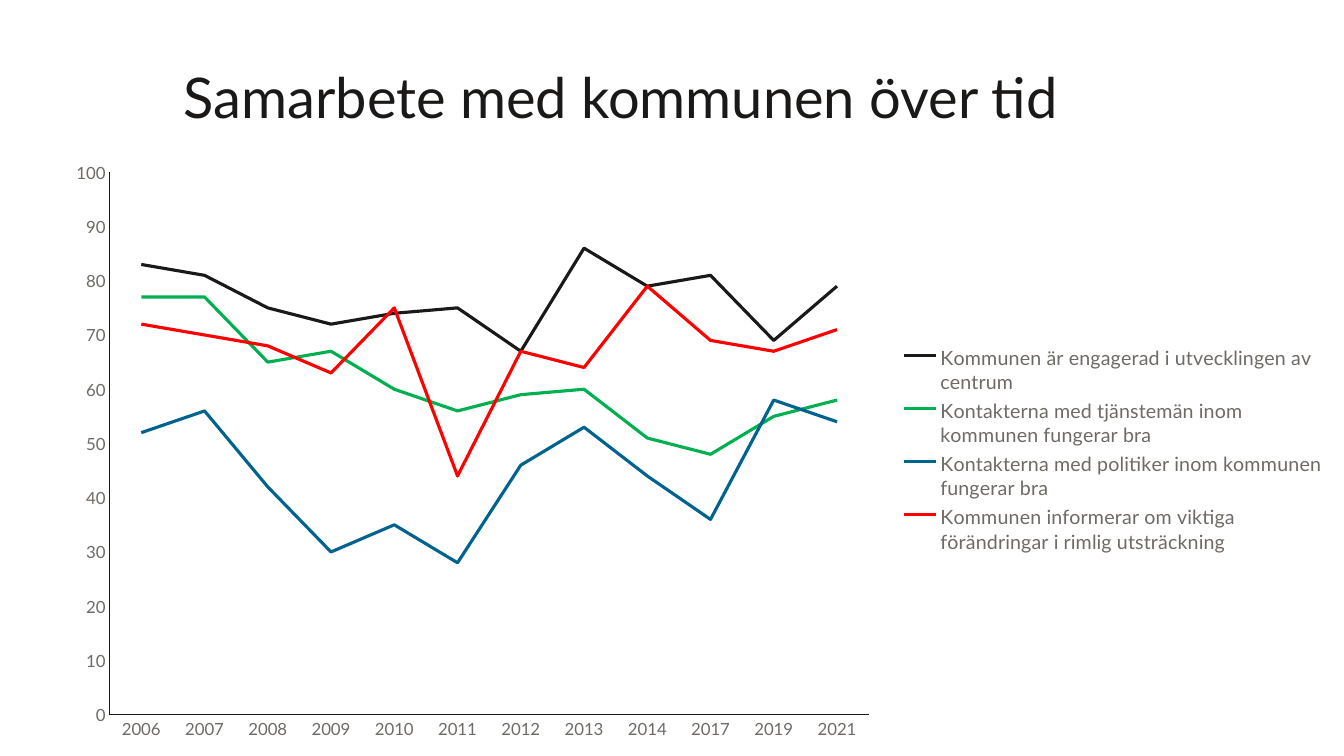
from dataclasses import dataclass

from lxml.etree import SubElement
from pptx import Presentation
from pptx.chart.data import CategoryChartData
from pptx.dml.color import RGBColor
from pptx.enum.chart import XL_CHART_TYPE as ChartType
from pptx.enum.chart import XL_LEGEND_POSITION as LegendPosition
from pptx.enum.chart import XL_TICK_MARK as TickMark
from pptx.enum.text import MSO_ANCHOR as Anchor
from pptx.enum.text import MSO_AUTO_SIZE as AutoSize
from pptx.enum.text import PP_ALIGN as Align
from pptx.oxml import parse_xml
from pptx.oxml.ns import nsdecls, qn
from pptx.util import Inches, Pt

FONT = "Lato"
INK = "1A1918"
GREY = "6E6A65"


@dataclass(frozen=True)
class Statement:
    text: str
    color: str
    shares: tuple[int, ...]


@dataclass(frozen=True)
class Region:
    """Fractions of the chart's width and height."""
    x: float
    y: float
    w: float
    h: float


YEARS = [str(year) for year in (*range(2006, 2015), 2017, 2019, 2021)]
STATEMENTS = [
    Statement("Kommunen är engagerad i utvecklingen av centrum", INK,
              (83, 81, 75, 72, 74, 75, 67, 86, 79, 81, 69, 79)),
    Statement("Kontakterna med tjänstemän inom kommunen fungerar bra", "00B050",
              (77, 77, 65, 67, 60, 56, 59, 60, 51, 48, 55, 58)),
    Statement("Kontakterna med politiker inom kommunen fungerar bra", "00638E",
              (52, 56, 42, 30, 35, 28, 46, 53, 44, 36, 58, 54)),
    Statement("Kommunen informerar om viktiga förändringar i rimlig utsträckning",
              "FF0000", (72, 70, 68, 63, 75, 44, 67, 64, 79, 69, 67, 71)),
]
PLOT_REGION = Region(0.05, 0.04, 0.59, 0.9)
LEGEND_REGION = Region(0.66, 0.32, 0.34, 0.36)


def apply(target, values: dict) -> None:
    for attribute, value in values.items():
        setattr(target, attribute, value)


def paint(color_format, hex_color: str) -> None:
    color_format.rgb = RGBColor.from_string(hex_color)


def style_font(font, size: float, hex_color: str) -> None:
    apply(font, {"name": FONT, "size": Pt(size), "bold": False})
    paint(font.color, hex_color)


def style_line(line, width: float, hex_color: str) -> None:
    line.width = Pt(width)
    paint(line.color, hex_color)


def make_layout(region: Region, inner: bool):
    layout = parse_xml(f"<c:layout {nsdecls('c')}><c:manualLayout/></c:layout>")
    settings = {"layoutTarget": "inner"} if inner else {}
    settings |= {"xMode": "edge", "yMode": "edge"}
    settings |= {key: str(getattr(region, key)) for key in "xywh"}
    for tag, value in settings.items():
        SubElement(layout[0], qn(f"c:{tag}")).set("val", value)
    return layout


def clear_layout(element) -> None:
    for layout in element.findall(qn("c:layout")):
        element.remove(layout)


def add_title(slide) -> None:
    title = slide.shapes.title
    apply(title, {"left": Inches(0.29), "top": Inches(0.21),
                  "width": Inches(11.73), "height": Inches(1.07)})
    frame = title.text_frame
    frame.text = "Samarbete med kommunen över tid"
    apply(frame, {"word_wrap": True, "auto_size": AutoSize.NONE,
                  "vertical_anchor": Anchor.BOTTOM, "margin_left": 0,
                  "margin_top": 0, "margin_right": 0, "margin_bottom": 0})
    apply(frame.paragraphs[0], {"alignment": Align.CENTER, "line_spacing": 0.8})
    style_font(frame.paragraphs[0].runs[0].font, 40, INK)


def add_trend_chart(slide) -> None:
    data = CategoryChartData(number_format="0")
    data.categories = YEARS
    for statement in STATEMENTS:
        data.add_series(statement.text, statement.shares)
    chart = slide.shapes.add_chart(
        ChartType.LINE, Inches(0.45), Inches(1.47), Inches(12.76), Inches(5.98),
        data).chart
    apply(chart, {"has_title": False, "has_legend": True})
    style_font(chart.font, 10, INK)

    for series, statement in zip(chart.plots[0].series, STATEMENTS):
        series.smooth = False
        style_line(series.format.line, 2.25, statement.color)
    chart.plots[0].vary_by_categories = False

    for axis in (chart.category_axis, chart.value_axis):
        apply(axis, {"major_tick_mark": TickMark.NONE,
                     "minor_tick_mark": TickMark.NONE,
                     "has_major_gridlines": False})
        style_font(axis.tick_labels.font, 12, GREY)
        style_line(axis.format.line, 0.75, INK)
    apply(chart.value_axis, {"minimum_scale": 0, "maximum_scale": 100,
                             "major_unit": 10})
    apply(chart.value_axis.tick_labels, {"number_format": "0",
                                         "number_format_is_linked": False})

    legend = chart.legend
    apply(legend, {"position": LegendPosition.RIGHT, "include_in_layout": False})
    style_font(legend.font, 14, GREY)

    plot_area = chart._chartSpace.chart.plotArea
    clear_layout(plot_area)
    plot_area.insert(0, make_layout(PLOT_REGION, inner=True))
    clear_layout(legend._element)
    legend._element.find(qn("c:overlay")).addprevious(
        make_layout(LEGEND_REGION, inner=False))


def main() -> None:
    deck = Presentation()
    apply(deck, {"slide_width": Inches(13.33), "slide_height": Inches(7.5)})
    slide = deck.slides.add_slide(deck.slide_layouts[5])
    add_title(slide)
    add_trend_chart(slide)
    deck.save("out.pptx")


if __name__ == "__main__":
    main()
